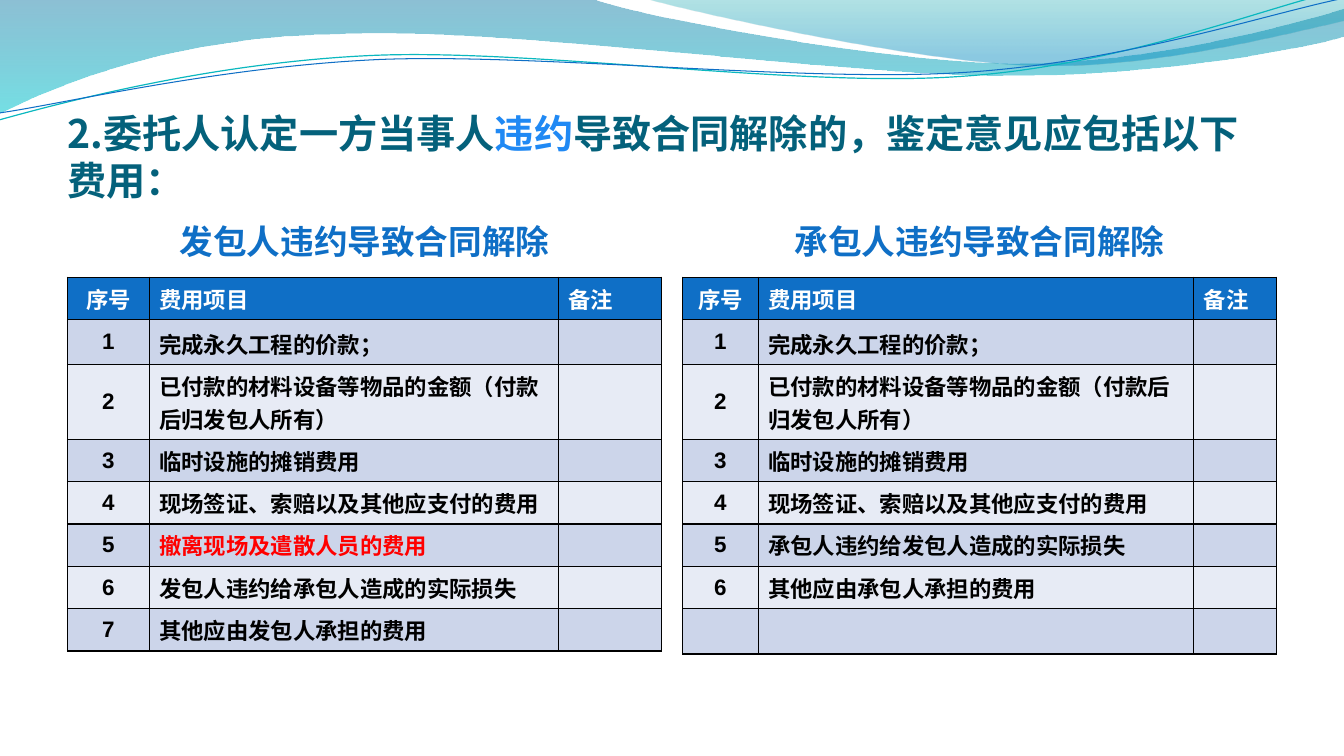
"""Builds the slide on fees due when a breach ends the contract."""
from lxml.etree import SubElement
from pptx import Presentation
from pptx.dml.color import RGBColor as Rgb
from pptx.enum.text import MSO_ANCHOR as Anchor, PP_ALIGN as Align
from pptx.oxml import parse_xml
from pptx.oxml.ns import nsdecls, qn
from pptx.util import Pt

PX = 9144
THEME = {
    "cjk": "Noto Sans CJK SC", "latin": "Arial",
    "title_size": 28, "heading_size": 24, "cell_size": 16,
    "title": "04617B", "accent": "2089F4", "blue": "0F6FC6", "teal": "0AB8BF",
    "white": "FFFFFF", "black": "000000", "red": "FF0000",
    "bands": ("E7EBF5", "CCD5EA"),
}


def style(paragraph, size, color, latin):
    """Sets the bold font of a whole paragraph."""
    font = paragraph.font
    font.size, font.bold, font.name = Pt(size), True, latin
    font.color.rgb = Rgb.from_string(color)
    defaults = paragraph._p.pPr.find(qn("a:defRPr"))
    SubElement(defaults, qn("a:ea")).set("typeface", THEME["cjk"])


def draw_curve(shapes, start, segments, close):
    """Draws one outline; a segment of three points is a cubic curve."""
    builder = shapes.build_freeform(*start, scale=PX)
    builder.add_line_segments([point for segment in segments for point in segment], close)
    curve = builder.convert_to_shape()
    curve.shadow.inherit = False
    steps = iter(list(curve._element.spPr.iter(qn("a:lnTo"))))
    for segment in segments:
        first, *others = [next(steps) for _ in segment]
        if others:
            bezier = SubElement(first.getparent(), qn("a:cubicBezTo"))
            first.addprevious(bezier)
            for step in (first, *others):
                bezier.append(step[0])
                step.getparent().remove(step)
    return curve


deck = Presentation()
deck.slide_width, deck.slide_height = 1333 * PX, 750 * PX
slide = deck.slides.add_slide(deck.slide_layouts[6])
shapes = slide.shapes

waves = [
    ((0, 0), [[(587, -1)], [(634, 17), (885, 63), (1011, 63)],
              [(1138, 63), (1278, 26), (1333, 9)], [(1335, 36)],
              [(1311, 44), (1160, 76), (994, 75)], [(829, 75), (509, 28), (343, 34)],
              [(172, 36), (61, 83), (-1, 113)]],
     [(0, "0074A1", 45), (1, "00C6CF", 55)]),
    ((639, -1), [[(679, 11), (909, 62), (1025, 65)],
                 [(1141, 69), (1282, 32), (1333, 21)], [(1333, 0)]],
     [(0, "00A1A9", 30), (0.8, "008BBF", 45)]),
]
for start, segments, stops in waves:
    wave = draw_curve(shapes, start, segments, True)
    wave.line.fill.background()
    wave.fill.gradient()
    wave.fill.gradient_angle = 270
    for stop, (position, color, _) in zip(wave.fill.gradient_stops, stops):
        stop.position, stop.color.rgb = position, Rgb.from_string(color)
    for tint, (_, _, opacity) in zip(wave._element.spPr.iter(qn("a:srgbClr")), stops):
        SubElement(tint, qn("a:alpha")).set("val", str(opacity * 1000))

strands = [
    ((-1, 119), [[(64, 101), (211, 62), (369, 55)], [(527, 48), (790, 87), (950, 76)],
                 [(1110, 66), (1252, 8), (1331, -10)]], "teal", 0.85),
    ((0, 112), [[(63, 103), (218, 66), (378, 59)], [(537, 53), (796, 82), (955, 72)],
                [(1115, 62), (1255, 14), (1334, -2)]], "blue", 0.75),
]
for start, segments, color, width in strands:
    strand = draw_curve(shapes, start, segments, False)
    strand.fill.background()
    strand.line.color.rgb = Rgb.from_string(THEME[color])
    strand.line.width = Pt(width)

title = shapes.add_textbox(67 * PX, 77 * PX, 1200 * PX, 125 * PX).text_frame
title.word_wrap, title.vertical_anchor = True, Anchor.BOTTOM
title.margin_left = title.margin_right = title.margin_bottom = 0
sentence = title.paragraphs[0]
style(sentence, THEME["title_size"], THEME["title"], THEME["cjk"])
for words, color in [("2.委托人认定一方当事人", "title"), ("违约", "accent"),
                     ("导致合同解除的，鉴定意见应包括以下费用：", "title")]:
    run = sentence.add_run()
    run.text = words
    run.font.color.rgb = Rgb.from_string(THEME[color])

shared_fees = ["完成永久工程的价款；", "已付款的材料设备等物品的金额（付款后归发包人所有）",
               "临时设施的摊销费用", "现场签证、索赔以及其他应支付的费用"]
evacuation = "撤离现场及遣散人员的费用"
parties = [
    (67, "发包人违约导致合同解除", (81, 406, 102), 42,
     [evacuation, "发包人违约给承包人造成的实际损失", "其他应由发包人承担的费用"]),
    (677, "承包人违约导致合同解除", (75, 432, 82), 45,
     ["承包人违约给发包人造成的实际损失", "其他应由承包人承担的费用", ""]),
]
for left, heading, widths, last_height, own_fees in parties:
    caption = shapes.add_textbox(left * PX, 203 * PX, 589 * PX, 72 * PX).text_frame
    caption.word_wrap, caption.vertical_anchor = True, Anchor.MIDDLE
    caption.margin_left = caption.margin_right = 5 * PX
    caption.margin_top = caption.margin_bottom = 0
    caption.text = heading
    caption.paragraphs[0].alignment = Align.CENTER
    style(caption.paragraphs[0], THEME["heading_size"], THEME["blue"], THEME["cjk"])

    rows = [("序号", "费用项目", "备注")]
    rows += [(str(number) if fee else "", fee, "")
             for number, fee in enumerate(shared_fees + own_fees, 1)]
    heights = [42, 45, 74, 42, 42, 42, 42, last_height]
    table = shapes.add_table(len(rows), len(widths), left * PX, 275 * PX,
                             sum(widths) * PX, sum(heights) * PX).table
    for column, width in zip(table.columns, widths):
        column.width = width * PX
    for r, (row, height) in enumerate(zip(rows, heights)):
        table.rows[r].height = height * PX
        for c, words in enumerate(row):
            cell = table.cell(r, c)
            cell.text = words
            cell.vertical_anchor = Anchor.MIDDLE
            entry = cell.text_frame.paragraphs[0]
            if c == 0:
                entry.alignment = Align.CENTER
            if r == 1 and c == 1:
                entry.line_spacing = 1.1
            ink = "white" if r == 0 else "red" if words == evacuation else "black"
            style(entry, THEME["cell_size"], THEME[ink], THEME["latin"])
            properties = cell._tc.get_or_add_tcPr()
            for side in ("lnL", "lnR", "lnT", "lnB"):
                properties.append(parse_xml(
                    f'<a:{side} {nsdecls("a")} w="12700"><a:solidFill>'
                    f'<a:srgbClr val="{THEME["black"]}"/></a:solidFill></a:{side}>'))
            cell.fill.solid()
            cell.fill.fore_color.rgb = Rgb.from_string(
                THEME["bands"][r % 2] if r else THEME["blue"])

deck.save("out.pptx")
